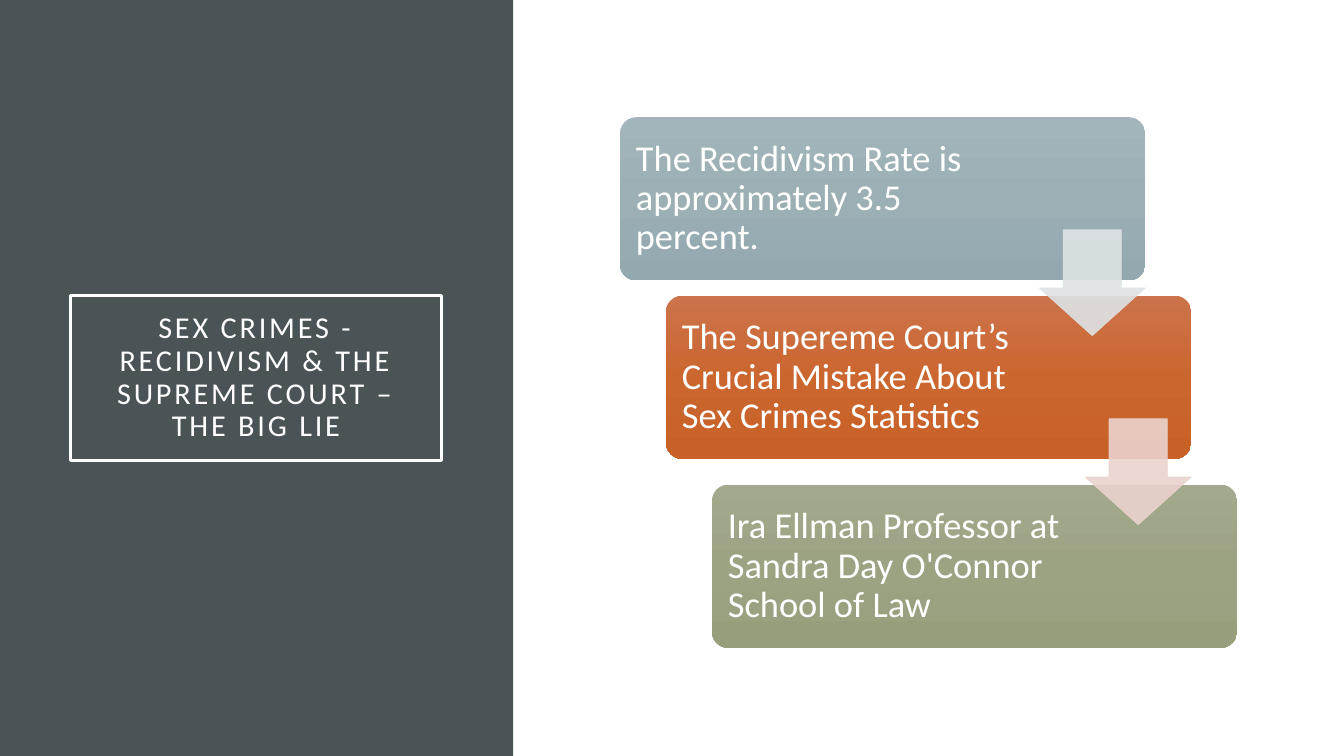
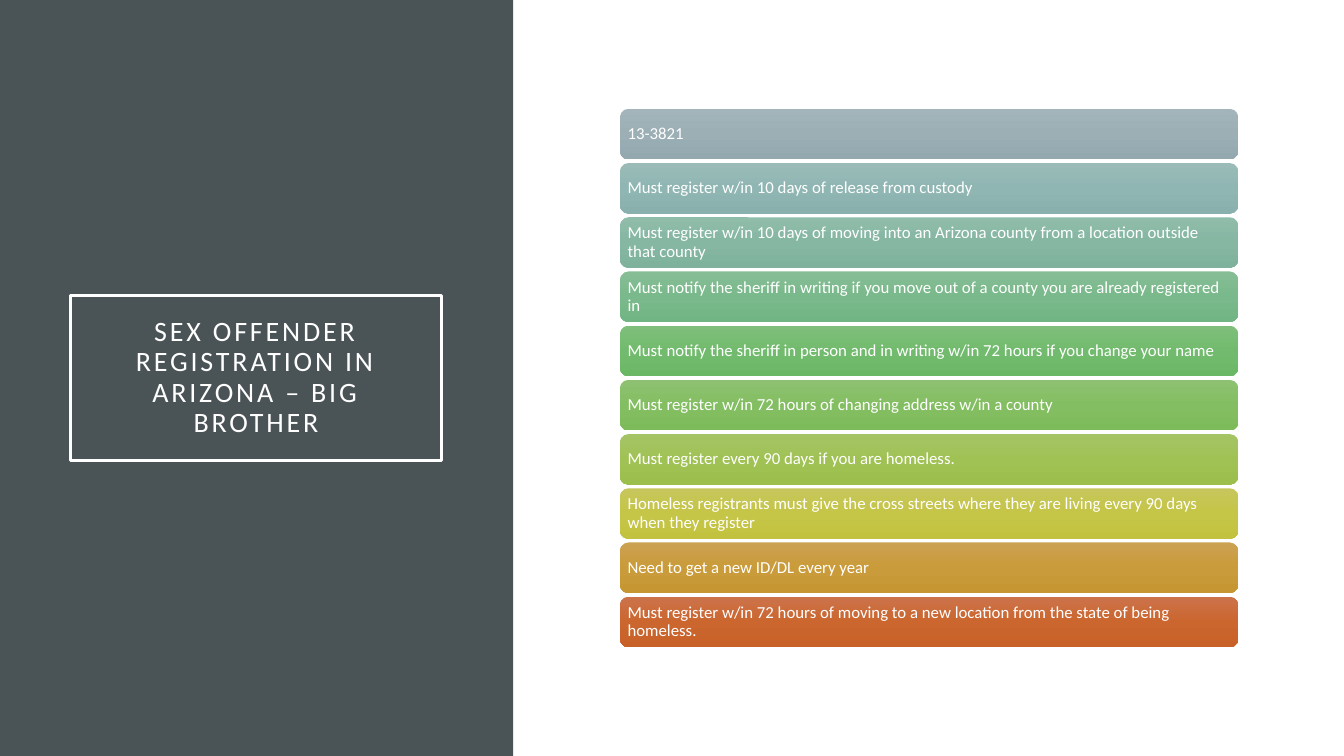
from copy import deepcopy
from dataclasses import dataclass

from pptx import Presentation
from pptx.dml.color import RGBColor as Color
from pptx.enum.shapes import MSO_SHAPE as Shape
from pptx.enum.text import MSO_ANCHOR as Anchor, PP_ALIGN as Align
from pptx.oxml.ns import qn
from pptx.oxml.xmlchemy import OxmlElement
from pptx.util import Inches, Pt


@dataclass(frozen=True)
class Theme:
    font: str = "Calibri"
    white: str = "FFFFFF"
    panel: str = "4A5356"
    slate: tuple = ("A3B5BB", "9BAFB5", "93A9AF")
    teal: tuple = ("9ABBB8", "90B6B3", "89B0AD")
    jade: tuple = ("90BCAA", "85B7A3", "7EB29D")
    mint: tuple = ("86BD95", "7AB98B", "72B584")
    green: tuple = ("7FBF7B", "72BB6E", "6AB766")
    leaf: tuple = ("8DC171", "84BE62", "7DBB5A")
    lime: tuple = ("A5C466", "A0C255", "9BBE4D")
    yellow: tuple = ("C7C65C", "C5C548", "C3C23F")
    amber: tuple = ("CBA152", "CA9B3A", "C69633")
    orange: tuple = ("CC734B", "CB662F", "C86128")
    olive: tuple = ("A3A98C", "9CA383", "979E7C")
    pale_slate: str = "DEE3E5"
    pale_orange: str = "EBD3CE"
    large_title: float = 21.6
    small_title: float = 20
    step_text: float = 26
    rule_text: float = 12
    title_border: float = 2.5
    arrow_border: float = 0.5
    letter_spacing: int = 200
    line_spacing: float = 0.9
    arrow_opacity: int = 90000


class SlideBuilder:
    """Draws styled elements, with lengths in percent of the slide's size."""

    def __init__(self, theme):
        self.theme = theme
        self.deck = Presentation()
        self.deck.slide_width = Inches(13.33)
        self.deck.slide_height = Inches(7.5)
        self.slide = None

    def across(self, share):
        return round(self.deck.slide_width * share / 100)

    def down(self, share):
        return round(self.deck.slide_height * share / 100)

    def shape(self, kind, left, top, width, height):
        shape = self.slide.shapes.add_shape(
            kind, self.across(left), self.down(top), self.across(width), self.down(height)
        )
        shape.shadow.inherit = False
        shape.fill.background()
        shape.line.fill.background()
        return shape

    def solid(self, fill, color):
        fill.solid()
        fill.fore_color.rgb = Color.from_string(color)

    def gradient(self, shape, colors):
        shape.fill.gradient()
        shape.fill.gradient_angle = 270
        stop_list = next(shape._element.spPr.iter(qn("a:gsLst")))
        stop_list.append(deepcopy(stop_list[0]))
        for index, (stop, color) in enumerate(zip(shape.fill.gradient_stops, colors)):
            stop.position = index / 2
            stop.color.rgb = Color.from_string(color)

    def label(self, shape, text, size, inset, align=Align.LEFT, extra_right=0):
        frame = shape.text_frame
        frame.word_wrap = True
        frame.vertical_anchor = Anchor.MIDDLE
        frame.margin_left = frame.margin_top = frame.margin_bottom = self.across(inset)
        frame.margin_right = self.across(inset + extra_right)
        para = frame.paragraphs[0]
        para.text = text
        para.alignment = align
        para.line_spacing = self.theme.line_spacing
        para.font.name = self.theme.font
        para.font.size = Pt(size)
        para.font.color.rgb = Color.from_string(self.theme.white)
        return para

    def new_slide(self, title, size):
        self.slide = self.deck.slides.add_slide(self.deck.slide_layouts[6])
        panel = self.shape(Shape.RECTANGLE, 0, 0, 38.18, 100)
        self.solid(panel.fill, self.theme.panel)
        frame = self.shape(Shape.RECTANGLE, 5.25, 39.07, 27.6, 21.87)
        self.solid(frame.line.fill, self.theme.white)
        frame.line.width = Pt(self.theme.title_border)
        para = self.label(frame, title, size, 1.5, Align.CENTER)
        para.font._element.set("spc", str(self.theme.letter_spacing))

    def card(self, box, text, colors, size, inset, extra_right=0, rounding=None):
        card = self.shape(Shape.ROUNDED_RECTANGLE, *box)
        if rounding is not None:
            card.adjustments[0] = rounding
        self.gradient(card, colors)
        self.label(card, text, size, inset, extra_right=extra_right)

    def arrow(self, box, color):
        arrow = self.shape(Shape.DOWN_ARROW, *box)
        arrow.adjustments[0] = 0.55
        arrow.adjustments[1] = 0.45
        self.solid(arrow.fill, color)
        self.solid(arrow.line.fill, color)
        arrow.line.width = Pt(self.theme.arrow_border)
        for tint in arrow._element.spPr.iter(qn("a:srgbClr")):
            alpha = OxmlElement("a:alpha")
            alpha.set("val", str(self.theme.arrow_opacity))
            tint.append(alpha)


CONTENT_LEFT = 46.13


def recidivism_slide(builder):
    theme = builder.theme
    builder.new_slide(
        "SEX CRIMES - RECIDIVISM & THE SUPREME COURT – THE BIG LIE", theme.large_title
    )
    indent, card_width, arrow_width = 3.42, 39.08, 7.88
    steps = [
        (15.5, "The Recidivism Rate is approximately 3.5 percent.", theme.slate),
        (39.1, "The Supereme Court’s Crucial Mistake About Sex Crimes Statistics", theme.orange),
        (64.1, "Ira Ellman Professor at Sandra Day O'Connor School of Law", theme.olive),
    ]
    for index, (top, text, colors) in enumerate(steps):
        box = (CONTENT_LEFT + index * indent, top, card_width, 21.6)
        builder.card(box, text, colors, theme.step_text, 0.83, extra_right=11.25, rounding=0.1)
    for index, color in enumerate((theme.pale_slate, theme.pale_orange)):
        left = CONTENT_LEFT + index * indent + card_width - arrow_width
        builder.arrow((left, 30.4 + index * 25, arrow_width, 14), color)


def registration_slide(builder):
    theme = builder.theme
    builder.new_slide("SEX OFFENDER REGISTRATION IN ARIZONA – BIG BROTHER", theme.small_title)
    rules = [
        ("13-3821", theme.slate),
        ("Must register w/in 10 days of release from custody", theme.teal),
        ("Must register w/in 10 days of moving into an Arizona county "
         "from a location outside that county", theme.jade),
        ("Must notify the sheriff in writing if you move out of a county "
         "you are already registered in", theme.mint),
        ("Must notify the sheriff in person and in writing w/in 72 hours "
         "if you change your name", theme.green),
        ("Must register w/in 72 hours of changing address w/in a county", theme.leaf),
        ("Must register every 90 days if you are homeless.", theme.lime),
        ("Homeless registrants must give the cross streets where they are living "
         "every 90 days when they register", theme.yellow),
        ("Need to get a new ID/DL every year", theme.amber),
        ("Must register w/in 72 hours of moving to a new location "
         "from the state of being homeless.", theme.orange),
    ]
    for index, (text, colors) in enumerate(rules):
        box = (CONTENT_LEFT, 14.4 + index * 7.17, 46, 6.67)
        builder.card(box, text, colors, theme.rule_text, 0.38)


def main():
    builder = SlideBuilder(Theme())
    recidivism_slide(builder)
    registration_slide(builder)
    builder.deck.save("out.pptx")


if __name__ == "__main__":
    main()
